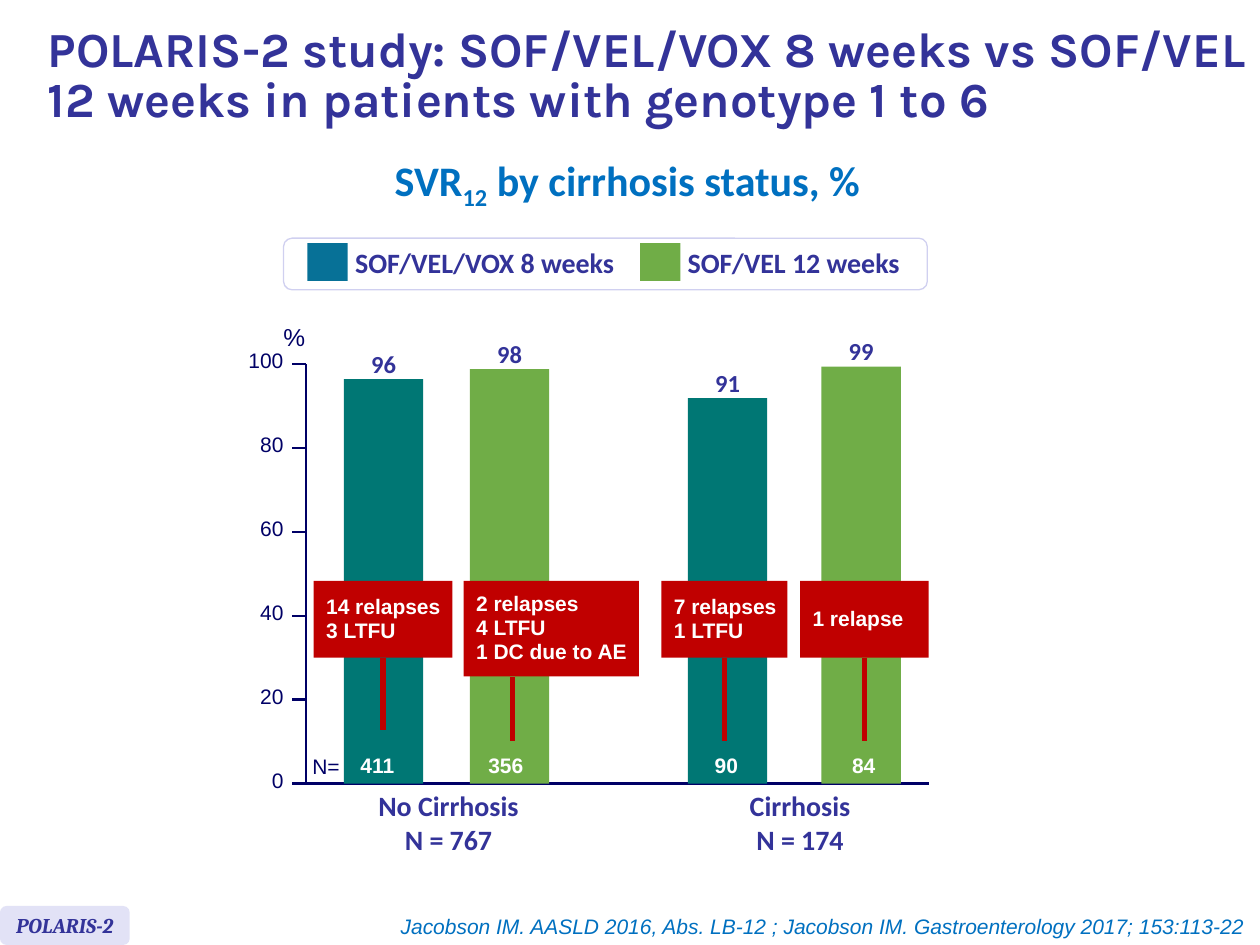
from lxml import etree
from pptx import Presentation
from pptx.dml.color import RGBColor
from pptx.enum import shapes, text
from pptx.oxml import ns
from pptx.util import Inches, Pt

INDIGO, NAVY, BLUE, WHITE, RED = "333399", "000066", "0070C0", "FFFFFF", "C00000"
TEAL, GREEN = "007774", "70AD47"
LEFT, CENTER, RIGHT = text.PP_ALIGN.LEFT, text.PP_ALIGN.CENTER, text.PP_ALIGN.RIGHT
TOP, MIDDLE, BOTTOM = text.MSO_ANCHOR.TOP, text.MSO_ANCHOR.MIDDLE, text.MSO_ANCHOR.BOTTOM
RECT, ROUNDED = shapes.MSO_SHAPE.RECTANGLE, shapes.MSO_SHAPE.ROUNDED_RECTANGLE

TITLE = "POLARIS-2 study: SOF/VEL/VOX 8 weeks vs SOF/VEL 12 weeks in patients with genotype 1 to 6"
SUBTITLE = [("SVR", 0), ("12", -25000), (" by cirrhosis status, %", 0)]
SOURCE = "Jacobson IM. AASLD 2016, Abs. LB-12 ; Jacobson IM. Gastroenterology 2017; 153:113-22"
LEGEND = [("SOF/VEL/VOX 8 weeks", "077197", 2.44, 2.72, 2.79),
          ("SOF/VEL 12 weeks", GREEN, 5.08, 5.36, 1.91)]
GROUPS = [("No Cirrhosis\nN = 767", 2.34), ("Cirrhosis\nN = 174", 5.13)]
BARS = [
    dict(value="96", left=2.73, top=3.01, color=TEAL, count="411", count_left=2.63,
         events="14 relapses\n3 LTFU", box=(2.49, 1.1, 0.61), stem=(3.04, 5.79)),
    dict(value="98", left=3.73, top=2.93, color=GREEN, count="356", count_left=3.65,
         events="2 relapses\n4 LTFU\n1 DC due to AE", box=(3.68, 1.39, 0.76), stem=(4.07, 5.88)),
    dict(value="91", left=5.46, top=3.16, color=TEAL, count="90", count_left=5.4,
         events="7 relapses\n1 LTFU", box=(5.25, 1, 0.61), stem=(5.75, 5.88)),
    dict(value="99", left=6.52, top=2.91, color=GREEN, count="84", count_left=6.49,
         events="1 relapse", box=(6.35, 1.02, 0.61), stem=(6.86, 5.88)),
]
AXIS_X, AXIS_TOP, AXIS_BOTTOM, AXIS_RIGHT = 2.43, 2.89, 6.22, 7.37
TICK_LEFT, LABEL_RIGHT, BAR_WIDTH, EVENTS_TOP = 2.32, 2.25, 0.63, 4.61

deck = Presentation()
deck.slide_width, deck.slide_height = Inches(10), Inches(7.5)
page = deck.slides.add_slide(deck.slide_layouts[5])


def rgb(value):
    return RGBColor.from_string(value)


def style(span, size, color, font, bold=False, italic=False):
    span.font.size, span.font.name = Pt(size), font
    span.font.bold, span.font.italic = bold, italic
    span.font.color.rgb = rgb(color)


def write(box, words, size, color, font="Arial", bold=False, italic=False, align=LEFT,
          anchor=TOP, wrap=True, spacing=None, inset=None):
    frame = box.text_frame
    frame.text = words
    frame.word_wrap = wrap
    frame.auto_size = text.MSO_AUTO_SIZE.NONE
    frame.vertical_anchor = anchor
    if inset is not None:
        frame.margin_left = frame.margin_right = Inches(inset)
        frame.margin_top = frame.margin_bottom = Inches(inset)
    for para in frame.paragraphs:
        para.alignment = align
        para.space_before = Pt(0)
        if spacing:
            para.line_spacing = spacing
        for span in para.runs:
            style(span, size, color, font, bold, italic)


def label(words, left, top, width, height, size, color, **options):
    box = page.shapes.add_textbox(Inches(left), Inches(top), Inches(width), Inches(height))
    write(box, words, size, color, **options)
    return box


def block(left, top, width, height, fill, kind=RECT, outline=None):
    box = page.shapes.add_shape(kind, Inches(left), Inches(top), Inches(width), Inches(height))
    box.shadow.inherit = False
    box.fill.solid()
    box.fill.fore_color.rgb = rgb(fill)
    if outline:
        box.line.color.rgb = rgb(outline)
        box.line.width = Pt(0.75)
    else:
        box.line.fill.background()
    return box


def line(x1, y1, x2, y2, color=NAVY, width=1.5):
    rule = page.shapes.add_connector(shapes.MSO_CONNECTOR.STRAIGHT,
                                     Inches(x1), Inches(y1), Inches(x2), Inches(y2))
    rule.line.color.rgb = rgb(color)
    rule.line.width = Pt(width)
    etree.SubElement(rule._element.spPr, ns.qn("a:effectLst"))
    return rule


title = page.shapes.title
title.left, title.top, title.width, title.height = (Inches(n) for n in (0.28, 0.08, 9.84, 1.07))
write(title, TITLE, 28, INDIGO, font="Karla", bold=True, anchor=MIDDLE, spacing=0.85)

subtitle = label("", 3, 1.42, 3.96, 0.35, 24, BLUE, align=CENTER, wrap=False, spacing=Pt(15.2))
for words, baseline in SUBTITLE:
    span = subtitle.text_frame.paragraphs[0].add_run()
    span.text = words
    style(span, 24, BLUE, "Calibri", bold=True)
    if baseline:
        span._r.get_or_add_rPr().set("baseline", str(baseline))

badge = block(0, 7.19, 1.03, 0.31, "E2E2F6", ROUNDED)
write(badge, "POLARIS-2", 12, INDIGO, font="Cambria", bold=True, italic=True,
      align=CENTER, anchor=MIDDLE, wrap=False)

block(2.25, 1.89, 5.11, 0.41, WHITE, ROUNDED, "D0D0F0")
for words, color, swatch_left, left, width in LEGEND:
    label(words, left, 1.83, width, 0.5, 16, INDIGO, font="Calibri", bold=True, anchor=MIDDLE)
    block(swatch_left, 1.93, 0.32, 0.3, color)

for words, left in GROUPS:
    label(words, left, 6.17, 2.44, 0.67, 16, INDIGO, font="Calibri", bold=True,
          align=CENTER, anchor=BOTTOM)

line(AXIS_X, AXIS_TOP, AXIS_X, AXIS_BOTTOM)
line(TICK_LEFT, AXIS_BOTTOM, AXIS_RIGHT, AXIS_BOTTOM)
for percent in range(0, 101, 20):
    y = AXIS_BOTTOM - (AXIS_BOTTOM - AXIS_TOP) * percent / 100
    if percent:
        line(TICK_LEFT, y, AXIS_X, y)
    width = 0.09 * len(str(percent))
    label(str(percent), LABEL_RIGHT - width, y - 0.13, width, 0.2, 12, NAVY,
          align=RIGHT, wrap=False, inset=0)
label("%", 2.15, 2.51, 0.38, 0.34, 14, NAVY, wrap=False)
label("N=", 2.38, 5.93, 0.42, 0.3, 12, NAVY, wrap=False)

for bar in BARS:
    block(bar["left"], bar["top"], BAR_WIDTH, AXIS_BOTTOM - bar["top"], bar["color"])
    label(bar["value"], bar["left"] + BAR_WIDTH / 2 - 0.1, bar["top"] - 0.22, 0.2, 0.21, 14, INDIGO,
          font="Calibri", bold=True, align=CENTER, wrap=False, spacing=Pt(15.2), inset=0)
    label(bar["count"], bar["count_left"], 5.82, 0.73, 0.4, 12, WHITE, bold=True,
          align=CENTER, anchor=BOTTOM)

for bar in BARS:
    left, width, height = bar["box"]
    stem_x, stem_end = bar["stem"]
    events = block(left, EVENTS_TOP, width, height, RED)
    write(events, bar["events"], 12, WHITE, bold=True, anchor=MIDDLE, wrap=False,
          spacing=0.95, inset=0.1)
    stem = line(stem_x, stem_end, stem_x, EVENTS_TOP + height, RED, 3)
    if abs(left + width / 2 - stem_x) < 0.02:
        stem.begin_x = events.left + events.width // 2
        stem.end_connect(events, 2)

label(SOURCE, 2.97, 7.2, 7.01, 0.3, 12, BLUE, italic=True, align=RIGHT, wrap=False)

deck.save("out.pptx")
